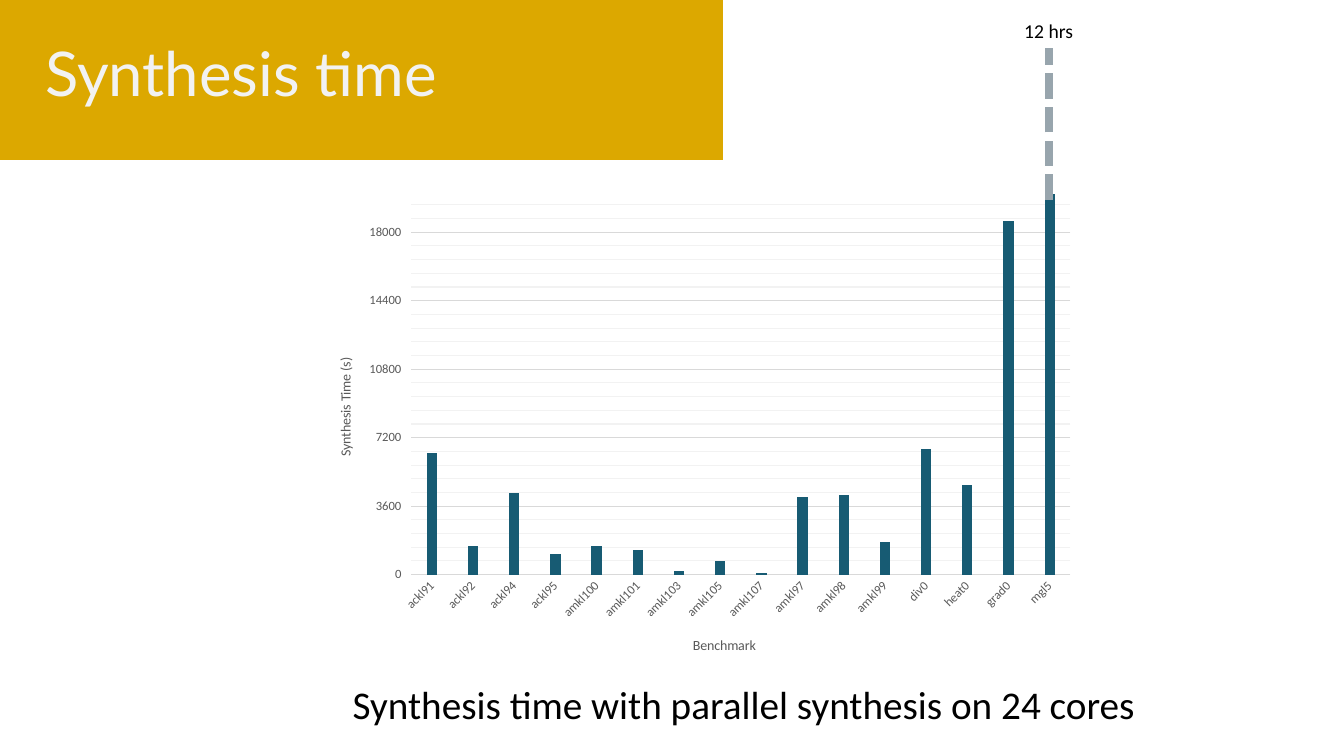
import dataclasses

import lxml.etree
import pptx
import pptx.chart.data
import pptx.dml.color
import pptx.enum.chart
import pptx.enum.dml
import pptx.enum.shapes
import pptx.enum.text
import pptx.oxml
import pptx.oxml.ns
import pptx.util

Inches = pptx.util.Inches
Pt = pptx.util.Pt
qn = pptx.oxml.ns.qn


@dataclasses.dataclass(frozen=True)
class Theme:
    """Colours, fonts and type sizes of the slide."""
    banner: str = "DCA800"
    white: str = "FFFFFF"
    title: str = "F2F2F2"
    text: str = "000000"
    axis: str = "595959"
    grid: str = "D9D9D9"
    minor_grid: str = "F2F2F2"
    bar: str = "175B73"
    marker: str = "98A5AD"
    title_font: str = "Lato"
    body_font: str = "Calibri"
    title_size: int = 44
    caption_size: int = 28
    label_size: int = 14
    axis_title_size: int = 10
    tick_size: int = 9


THEME = Theme()

SYNTHESIS_TIMES = {
    "ackl91": 6400, "ackl92": 1500, "ackl94": 4300, "ackl95": 1100,
    "amkl100": 1500, "amkl101": 1300, "amkl103": 200, "amkl105": 700,
    "amkl107": 100, "amkl97": 4100, "amkl98": 4200, "amkl99": 1700,
    "div0": 6600, "heat0": 4700, "grad0": 18600, "mgl5": 46400,
}


def rgb(color):
    """Turn a hex string into a colour."""
    return pptx.dml.color.RGBColor.from_string(color)


def style_font(font, size, color, name=THEME.body_font):
    """Set size, colour and typeface of a font."""
    font.size, font.name, font.bold = Pt(size), name, False
    font.color.rgb = rgb(color)


def style_line(line, color, width=0.75):
    """Set colour and width of a line."""
    line.color.rgb = rgb(color)
    line.width = Pt(width)


def add_text(s, box, text, size, color=THEME.text, name=THEME.body_font, wrap=False):
    """Add a one-run text box and return its text frame."""
    tf = s.shapes.add_textbox(*map(Inches, box)).text_frame
    tf.word_wrap = wrap
    r = tf.paragraphs[0].add_run()
    r.text = text
    style_font(r.font, size, color, name)
    return tf


def add_banner(s, box, text):
    """Draw the coloured banner with the slide title inside."""
    x, y, w, h = box
    sp = s.shapes.add_shape(
        pptx.enum.shapes.MSO_SHAPE.FLOWCHART_PROCESS, *map(Inches, box))
    sp.shadow.inherit = False
    sp.fill.solid()
    sp.fill.fore_color.rgb = rgb(THEME.banner)
    style_line(sp.line, THEME.white, 1.5)
    tf = add_text(s, (x + 0.36, y + 0.05, w - 0.36, h - 0.17), text,
                  THEME.title_size, THEME.title, THEME.title_font, wrap=True)
    tf.vertical_anchor = pptx.enum.text.MSO_ANCHOR.MIDDLE
    tf.paragraphs[0].line_spacing = 0.9


def set_layout(node, **fractions):
    """Place a chart part at fractions of the chart area."""
    for old in node.findall(qn("c:layout")):
        node.remove(old)
    layout = pptx.oxml.parse_xml(
        f'<c:layout {pptx.oxml.ns.nsdecls("c")}><c:manualLayout/></c:layout>')
    manual = layout[0]
    if "w" in fractions:
        lxml.etree.SubElement(manual, qn("c:layoutTarget")).set("val", "inner")
    for side in "xy":
        lxml.etree.SubElement(manual, qn(f"c:{side}Mode")).set("val", "edge")
    for key, value in fractions.items():
        lxml.etree.SubElement(manual, qn(f"c:{key}")).set("val", str(value))
    text = node.find(qn("c:tx"))
    if text is None:
        node.insert(0, layout)
    else:
        text.addnext(layout)


def style_minor_gridlines(gridlines):
    """Set colour and width of the minor gridlines."""
    gridlines.append(pptx.oxml.parse_xml(
        f'<c:spPr {pptx.oxml.ns.nsdecls("c", "a")}><a:ln w="{Pt(0.75)}"><a:solidFill>'
        f'<a:srgbClr val="{THEME.minor_grid}"/></a:solidFill></a:ln></c:spPr>'))


def style_axis(axis, title):
    """Give an axis its title and tick label type."""
    axis.has_title = True
    r = axis.axis_title.text_frame.paragraphs[0].add_run()
    r.text = title
    style_font(r.font, THEME.axis_title_size, THEME.axis)
    style_font(axis.tick_labels.font, THEME.tick_size, THEME.axis)


def add_time_chart(s, box):
    """Add the column chart of synthesis time by benchmark."""
    data = pptx.chart.data.CategoryChartData()
    data.categories = list(SYNTHESIS_TIMES)
    data.add_series("Series 1", list(SYNTHESIS_TIMES.values()))
    chart = s.shapes.add_chart(
        pptx.enum.chart.XL_CHART_TYPE.COLUMN_CLUSTERED, *map(Inches, box), data).chart
    chart.has_legend = False
    chart.has_title = False
    style_font(chart.font, THEME.axis_title_size, THEME.text)

    plot = chart.plots[0]
    plot.gap_width = 300
    plot.vary_by_categories = False
    fill = plot.series[0].format.fill
    fill.solid()
    fill.fore_color.rgb = rgb(THEME.bar)

    cat, val = chart.category_axis, chart.value_axis
    style_axis(cat, "Benchmark")
    style_axis(val, "Synthesis Time (s)")
    cat.major_tick_mark = pptx.enum.chart.XL_TICK_MARK.NONE
    style_line(cat.format.line, THEME.grid)
    val.minimum_scale, val.maximum_scale = 0, 20000
    val.major_unit, val.minor_unit = 3600, 720
    val.has_major_gridlines = val.has_minor_gridlines = True
    style_line(val.major_gridlines.format.line, THEME.grid)
    val.format.line.fill.background()

    root = chart.element
    style_minor_gridlines(root.xpath(".//c:valAx/c:minorGridlines")[0])
    root.xpath(".//c:catAx/c:txPr/a:bodyPr")[0].set("rot", "-2700000")
    root.xpath(".//c:valAx/c:title//a:bodyPr")[0].set("rot", "-5400000")
    set_layout(root.xpath(".//c:plotArea")[0], x=0.13, y=0.02, w=0.85, h=0.78)
    set_layout(root.xpath(".//c:catAx/c:title")[0], x=0.49, y=0.92)
    set_layout(root.xpath(".//c:valAx/c:title")[0], x=0.03, y=0.35)


def add_overflow_marker(s, box):
    """Label the bar that runs off the scale and extend it with a dashed line."""
    x, y, w, h = box
    add_text(s, (x, y, w, 0.34), "12 hrs", THEME.label_size)
    mid = Inches(x + w / 2)
    line = s.shapes.add_connector(
        pptx.enum.shapes.MSO_CONNECTOR.STRAIGHT,
        mid, Inches(y + h), mid, Inches(y + 0.34))
    style_line(line.line, THEME.marker, 6)
    line.line.dash_style = pptx.enum.dml.MSO_LINE.SQUARE_DOT
    sp_pr = line.element.find(qn("p:spPr"))
    lxml.etree.SubElement(sp_pr, qn("a:effectLst"))


def main():
    """Build the slide and save it."""
    prs = pptx.Presentation()
    prs.slide_width, prs.slide_height = Inches(13.33), Inches(7.5)
    s = prs.slides.add_slide(prs.slide_layouts[6])
    add_banner(s, (-0.01, -0.02, 7.19, 1.62), "Synthesis time")
    add_time_chart(s, (3.08, 1.83, 7.69, 4.84))
    add_overflow_marker(s, (10.06, 0.14, 0.69, 1.84))
    add_text(s, (3.4, 6.7, 8.05, 0.57),
             "Synthesis time with parallel synthesis on 24 cores", THEME.caption_size)
    prs.save("out.pptx")


if __name__ == "__main__":
    main()
